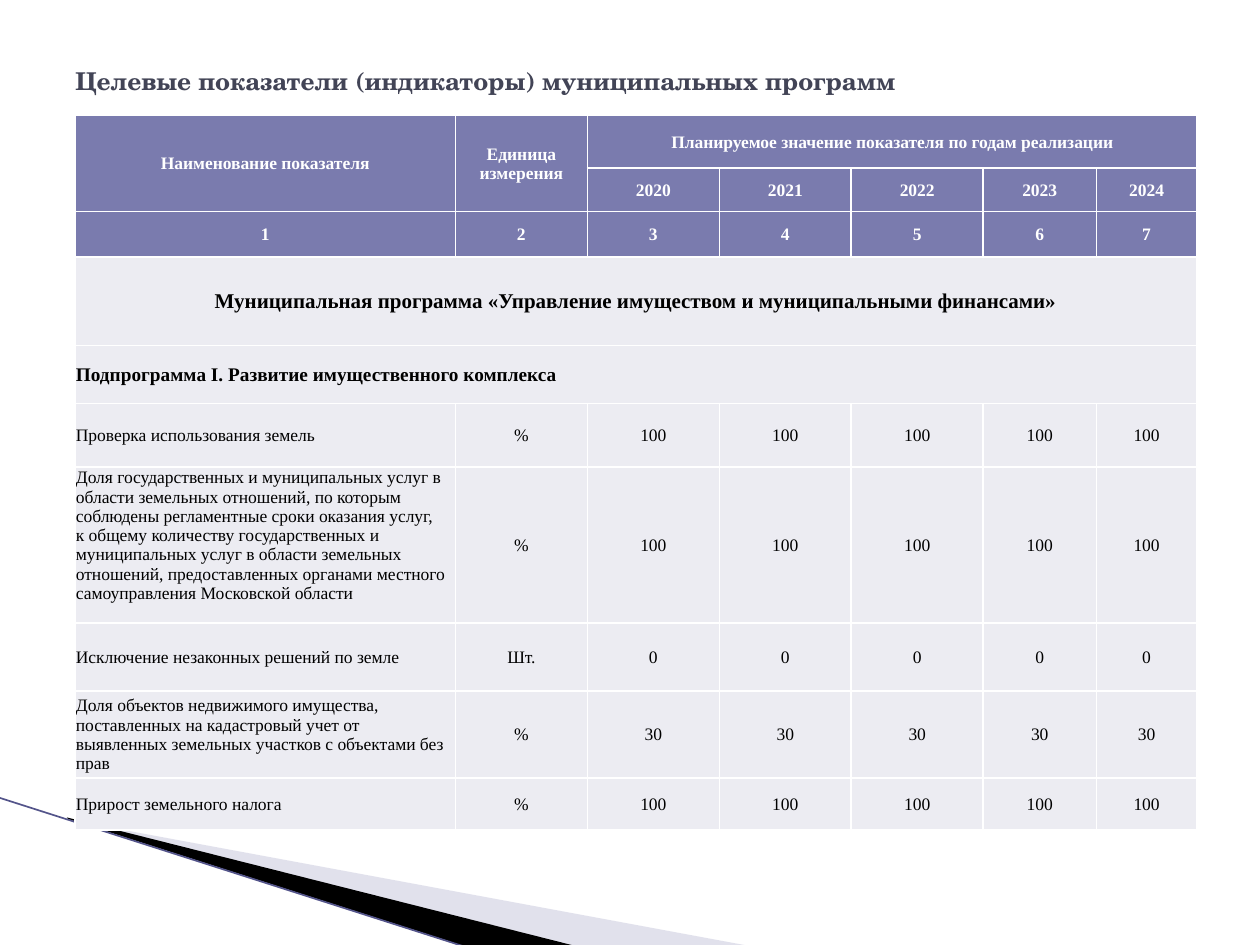
"""Builds a slide with the target indicators of a municipal programme."""
from lxml import etree
from pptx import Presentation
from pptx import util as u
from pptx.dml.color import RGBColor
from pptx.enum import shapes, text
from pptx.oxml import ns

COLORS = {
    "title": "424456",
    "header": "7A7BAE",
    "body": "ECECF2",
    "white": "FFFFFF",
    "black": "000000",
    "wedge": "B6B6D1",
    "line": "53548A",
}
TITLE = "Целевые показатели (индикаторы) муниципальных программ"
COLUMN_WIDTHS = [7.67, 2.66, 2.66, 2.66, 2.66, 2.28, 2.03]
ROW_HEIGHTS = [1.06, 0.81, 0.92, 1.79, 1.16, 1.29, 3.14, 1.37, 1.75, 1.05]
HEADER_ROWS = [
    ["Наименование показателя", "Единица измерения",
     "Планируемое значение показателя по годам реализации"],
    ["", "", *(str(year) for year in range(2020, 2025))],
    [str(number) for number in range(1, 8)],
]
PROGRAM = "Муниципальная программа «Управление имуществом и муниципальными финансами»"
SUBPROGRAM = "Подпрограмма I. Развитие имущественного комплекса"
LONG_INDICATOR = (
    "Доля государственных и муниципальных услуг в области земельных отношений, "
    "по которым соблюдены регламентные сроки оказания услуг,\n"
    "к общему количеству государственных и муниципальных услуг в области "
    "земельных отношений, предоставленных органами местного самоуправления "
    "Московской области"
)
INDICATORS = [
    ("Проверка использования земель", "%", "100"),
    (LONG_INDICATOR, "%", "100"),
    ("Исключение незаконных решений по земле", "Шт.", "0"),
    ("Доля объектов недвижимого имущества, поставленных на кадастровый учет "
     "от выявленных земельных участков с объектами без прав", "%", "30"),
    ("Прирост земельного налога", "%", "100"),
]
MERGES = [((0, 0), (1, 0)), ((0, 1), (1, 1)), ((0, 2), (0, 6)),
          ((3, 0), (3, 6)), ((4, 0), (4, 6))]


class SlideBuilder:
    """Holds the style and the current slide."""

    def __init__(self, slide, font="Times New Roman", title_font="TeX Gyre Schola"):
        self.slide = slide
        self.font = font
        self.title_font = title_font

    def color(self, name):
        """Return a named colour."""
        return RGBColor.from_string(COLORS[name])

    def add_runs(self, paragraph, content, size, color, bold, font=None):
        """Add text run by run, with a line break at each newline."""
        for index, line in enumerate(content.split("\n")):
            if index:
                paragraph.add_line_break()
            run = paragraph.add_run()
            run.text = line
            run.font.name = font or self.font
            run.font.size = u.Pt(size)
            run.font.bold = bold
            run.font.color.rgb = self.color(color)

    def wedge(self, points, color, opacity=None):
        """Draw a filled outline through points in centimetres."""
        corners = [(u.Cm(x), u.Cm(y)) for x, y in points]
        builder = self.slide.shapes.build_freeform(*corners[0])
        builder.add_line_segments(corners[1:])
        shape = builder.convert_to_shape()
        shape.shadow.inherit = False
        shape.line.fill.background()
        shape.fill.solid()
        shape.fill.fore_color.rgb = self.color(color)
        if opacity is not None:
            fill_color = shape._element.spPr.find(".//" + ns.qn("a:srgbClr"))
            etree.SubElement(fill_color, ns.qn("a:alpha"), val=str(opacity * 1000))

    def line(self, start, end, color, width):
        """Draw a straight line between two points in centimetres."""
        connector = self.slide.shapes.add_connector(
            shapes.MSO_CONNECTOR.STRAIGHT, *(u.Cm(value) for value in start + end))
        connector.line.color.rgb = self.color(color)
        connector.line.width = u.Pt(width)
        etree.SubElement(connector._element.spPr, ns.qn("a:effectLst"))

    def title(self, content, left, top, width, height):
        """Add the slide heading."""
        box = self.slide.shapes.add_textbox(
            u.Cm(left), u.Cm(top), u.Cm(width), u.Cm(height))
        frame = box.text_frame
        frame.word_wrap = True
        frame.vertical_anchor = text.MSO_ANCHOR.MIDDLE
        self.add_runs(frame.paragraphs[0], content, 14, "title", True, self.title_font)

    def table(self, left, top):
        """Add an empty table with the column and row sizes set."""
        table = self.slide.shapes.add_table(
            len(ROW_HEIGHTS), len(COLUMN_WIDTHS), u.Cm(left), u.Cm(top),
            u.Cm(sum(COLUMN_WIDTHS)), u.Cm(sum(ROW_HEIGHTS))).table
        table.horz_banding = False
        for column, width in zip(table.columns, COLUMN_WIDTHS):
            column.width = u.Cm(width)
        for row, height in zip(table.rows, ROW_HEIGHTS):
            row.height = u.Cm(height)
        for index, row in enumerate(table.rows):
            for cell in row.cells:
                self.style_cell(cell, "header" if index < len(HEADER_ROWS) else "body")
        for first, last in MERGES:
            table.cell(*first).merge(table.cell(*last))
        return table

    def style_cell(self, cell, fill):
        """Set the fill, margins and borders of a cell."""
        cell.fill.solid()
        cell.fill.fore_color.rgb = self.color(fill)
        cell.margin_left = cell.margin_right = cell.margin_top = u.Cm(0.02)
        cell.margin_bottom = 0
        cell.vertical_anchor = text.MSO_ANCHOR.MIDDLE
        properties = cell._tc.get_or_add_tcPr()
        for index, side in enumerate("LRTB"):
            border = etree.Element(ns.qn(f"a:ln{side}"), w=str(u.Pt(1)))
            border_fill = etree.SubElement(border, ns.qn("a:solidFill"))
            etree.SubElement(border_fill, ns.qn("a:srgbClr"), val=COLORS["white"])
            properties.insert(index, border)

    def cell_text(self, cell, content, size=10, color="black", bold=False, centered=True):
        """Set the text of a cell."""
        paragraph = cell.text_frame.paragraphs[0]
        alignment = text.PP_ALIGN
        paragraph.alignment = alignment.CENTER if centered else alignment.LEFT
        self.add_runs(paragraph, content, size, color, bold)


def fill_table(builder, table):
    """Fill the header, programme and indicator rows."""
    for row, labels in enumerate(HEADER_ROWS):
        for column, label in enumerate(labels):
            if label:
                builder.cell_text(table.cell(row, column), label, color="white", bold=True)
    builder.cell_text(table.cell(3, 0), PROGRAM, size=12, bold=True)
    builder.cell_text(table.cell(4, 0), SUBPROGRAM, size=11, bold=True, centered=False)
    for row, (name, unit, value) in enumerate(INDICATORS, start=5):
        for column, label in enumerate([name, unit] + [value] * 5):
            builder.cell_text(table.cell(row, column), label, centered=column > 0)
    table.cell(6, 0).vertical_anchor = text.MSO_ANCHOR.TOP


def main():
    """Build and save the slide."""
    presentation = Presentation()
    presentation.slide_width = u.Cm(25.4)
    presentation.slide_height = u.Cm(19.05)
    slide = presentation.slides.add_slide(presentation.slide_layouts[6])
    builder = SlideBuilder(slide)
    builder.wedge([(1.4, 16.53), (15.11, 19.07), (11.58, 19.07), (1.4, 16.51)], "wedge", 40)
    builder.wedge([(1.35, 16.48), (11.6, 19.07), (9.45, 19.1), (1.37, 16.51)], "black")
    builder.line((-0.02, 16.08), (9.42, 19.1), "line", 0.95)
    builder.title(TITLE, 1.27, 0.76, 22.86, 1.75)
    fill_table(builder, builder.table(1.51, 2.33))
    presentation.save("out.pptx")


if __name__ == "__main__":
    main()
